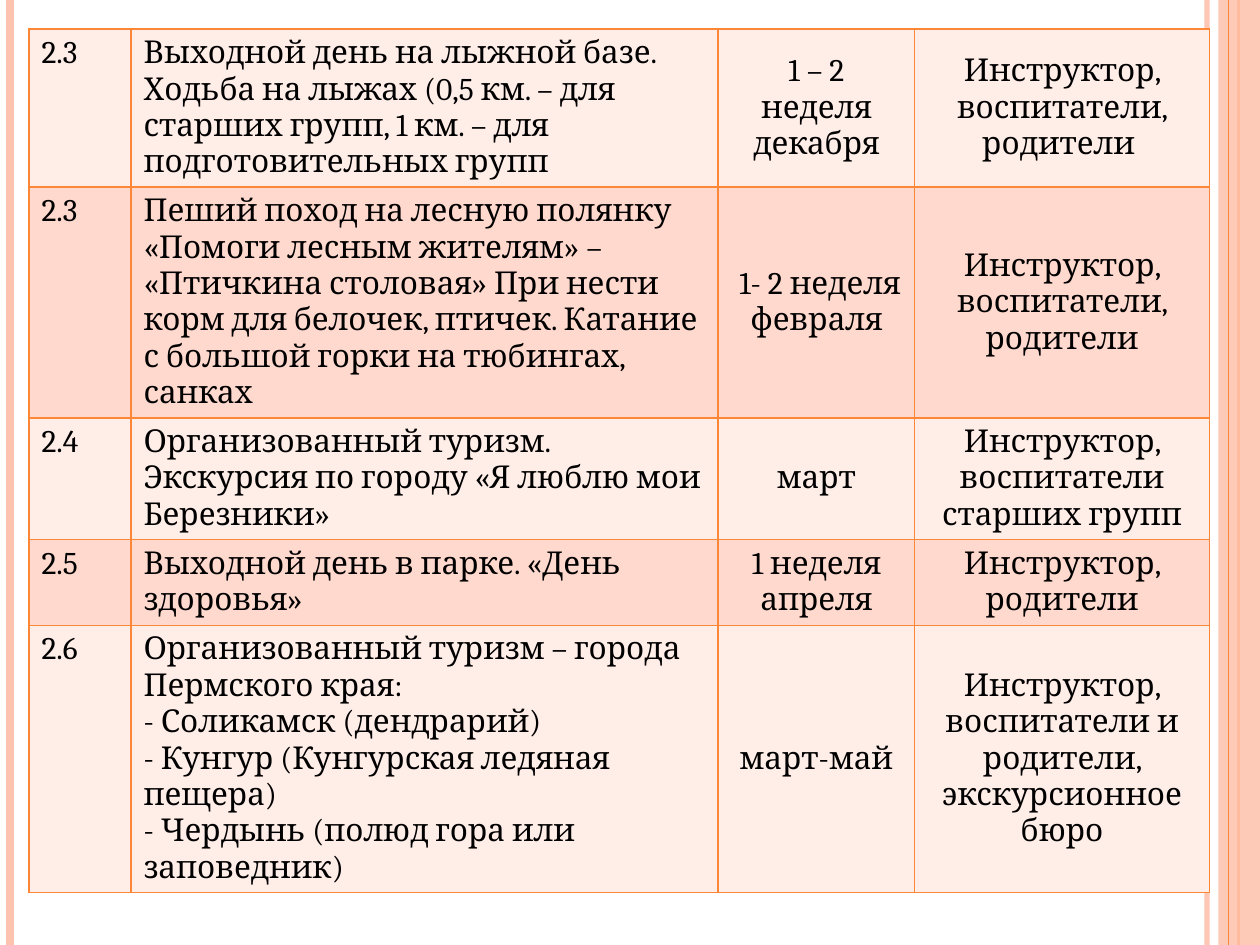
from lxml.etree import SubElement
from pptx import Presentation
from pptx.dml.color import RGBColor
from pptx.enum.shapes import MSO_CONNECTOR, MSO_SHAPE
from pptx.enum.text import MSO_ANCHOR, PP_ALIGN
from pptx.oxml.ns import qn
from pptx.util import Inches, Pt

ORANGE = RGBColor(0xFE, 0x86, 0x37)
PEACH = RGBColor(0xFE, 0xC3, 0xAE)
LIGHT = RGBColor(0xFF, 0xED, 0xE8)
DEEP = RGBColor(0xFF, 0xD9, 0xCE)
BLACK = RGBColor(0, 0, 0)

WIDE, HIGH = Inches(10), Inches(7.5)
COL, ROW = WIDE // 1000, HIGH // 750
COLS = (81, 466, 156, 234)
ROWS = (125, 183, 96, 68, 212)
TEXT = {"name": "Cambria", "size": Pt(18)}
LEFT = {"vertical_anchor": MSO_ANCHOR.TOP}
MID = {"vertical_anchor": MSO_ANCHOR.MIDDLE}

PLAN = [
    ("2.3",
     "Выходной день на лыжной базе. Ходьба на лыжах (0,5 км. – для "
     "старших групп, 1 км. – для подготовительных групп",
     "1 – 2 неделя декабря",
     "Инструктор, воспитатели, родители "),
    ("2.3",
     "Пеший поход на лесную полянку «Помоги лесным жителям» – «Птичкина "
     "столовая» При нести корм для белочек, птичек. Катание с большой "
     "горки на тюбингах, санках",
     " 1- 2 неделя февраля",
     "Инструктор, воспитатели, родители"),
    ("2.4",
     "Организованный туризм.\nЭкскурсия по городу «Я люблю мои Березники»",
     "март",
     "Инструктор, воспитатели старших групп"),
    ("2.5",
     "Выходной день в парке. «День здоровья»",
     "1 неделя апреля",
     "Инструктор, родители"),
    ("2.6",
     "Организованный туризм – города Пермского края:\n"
     "- Соликамск (дендрарий)\n"
     "- Кунгур (Кунгурская ледяная пещера)\n"
     "- Чердынь (полюд гора или заповедник)",
     "март-май",
     "Инструктор, воспитатели и родители, экскурсионное бюро"),
]


def assign(item, values):
    """Set each named attribute of the item."""
    for name, value in values.items():
        setattr(item, name, value)


def fade(part, share):
    """Make the solid colour of a part see-through, share in percent."""
    color = next(part.iter(qn("a:srgbClr")))
    SubElement(color, qn("a:alpha"), val=str(share * 1000))


def stripe(slide, x, top, high, color, size, share=100):
    """Draw one upright line."""
    line = slide.shapes.add_connector(
        MSO_CONNECTOR.STRAIGHT, x, top, x, top + high)
    line.line.color.rgb = color
    line.line.width = Pt(size)
    if share < 100:
        fade(line.line._get_or_add_ln(), share)
    SubElement(line._element.spPr, qn("a:effectLst"))


def frame(slide, left, top, wide, high):
    """Draw the side stripes and the right band in the given box."""
    stripe(slide, left + wide * 958 // 1000, top, high, PEACH, 3, 93)
    stripe(slide, left + wide * 8 // 1000, top, high, PEACH, 4.5)
    stripe(slide, left + wide * 983 // 1000, top, high, ORANGE, 1.5)
    start = wide * 967 // 1000
    band = slide.shapes.add_shape(
        MSO_SHAPE.RECTANGLE, left + start, top, wide - start, high)
    band.shadow.inherit = False
    band.fill.solid()
    band.fill.fore_color.rgb = PEACH
    band.line.fill.background()
    fade(band._element.spPr, 87)
    stripe(slide, left + wide * 975 // 1000, top, high, ORANGE, 0.75)


def border(cell):
    """Give a cell an orange line on all four sides."""
    props = cell._tc.get_or_add_tcPr()
    for side in ("lnL", "lnR", "lnT", "lnB"):
        line = SubElement(props, qn("a:" + side), w=str(Pt(1)))
        fill = SubElement(line, qn("a:solidFill"))
        SubElement(fill, qn("a:srgbClr"), val=str(ORANGE))


def enter(cell, text, color, align, look):
    """Fill one cell with styled text."""
    border(cell)
    cell.fill.solid()
    cell.fill.fore_color.rgb = color
    cell.text = text
    assign(cell, look)
    for para in cell.text_frame.paragraphs:
        para.alignment = align
        for run in para.runs:
            assign(run.font, TEXT)
            run.font.color.rgb = BLACK


def agenda(slide, left, top, wide, high):
    """Place the plan of events as a table in the given box."""
    table = slide.shapes.add_table(
        len(ROWS), len(COLS), left, top, wide, high).table
    assign(table, {"first_row": False, "horz_banding": False})
    for column, share in zip(table.columns, COLS):
        column.width = wide * share // sum(COLS)
    for row, share in zip(table.rows, ROWS):
        row.height = high * share // sum(ROWS)
    for i, event in enumerate(PLAN):
        color = DEEP if i % 2 else LIGHT
        for j, text in enumerate(event):
            align, look = ((PP_ALIGN.LEFT, LEFT) if j < 2
                           else (PP_ALIGN.CENTER, MID))
            enter(table.cell(i, j), text, color, align, look)


def main():
    """Build the slide and save it."""
    deck = Presentation()
    assign(deck, {"slide_width": WIDE, "slide_height": HIGH})
    slide = deck.slides.add_slide(deck.slide_layouts[6])
    frame(slide, 0, 0, WIDE, HIGH)
    agenda(slide, 23 * COL, 23 * ROW, sum(COLS) * COL, sum(ROWS) * ROW)
    deck.save("out.pptx")


if __name__ == "__main__":
    main()
